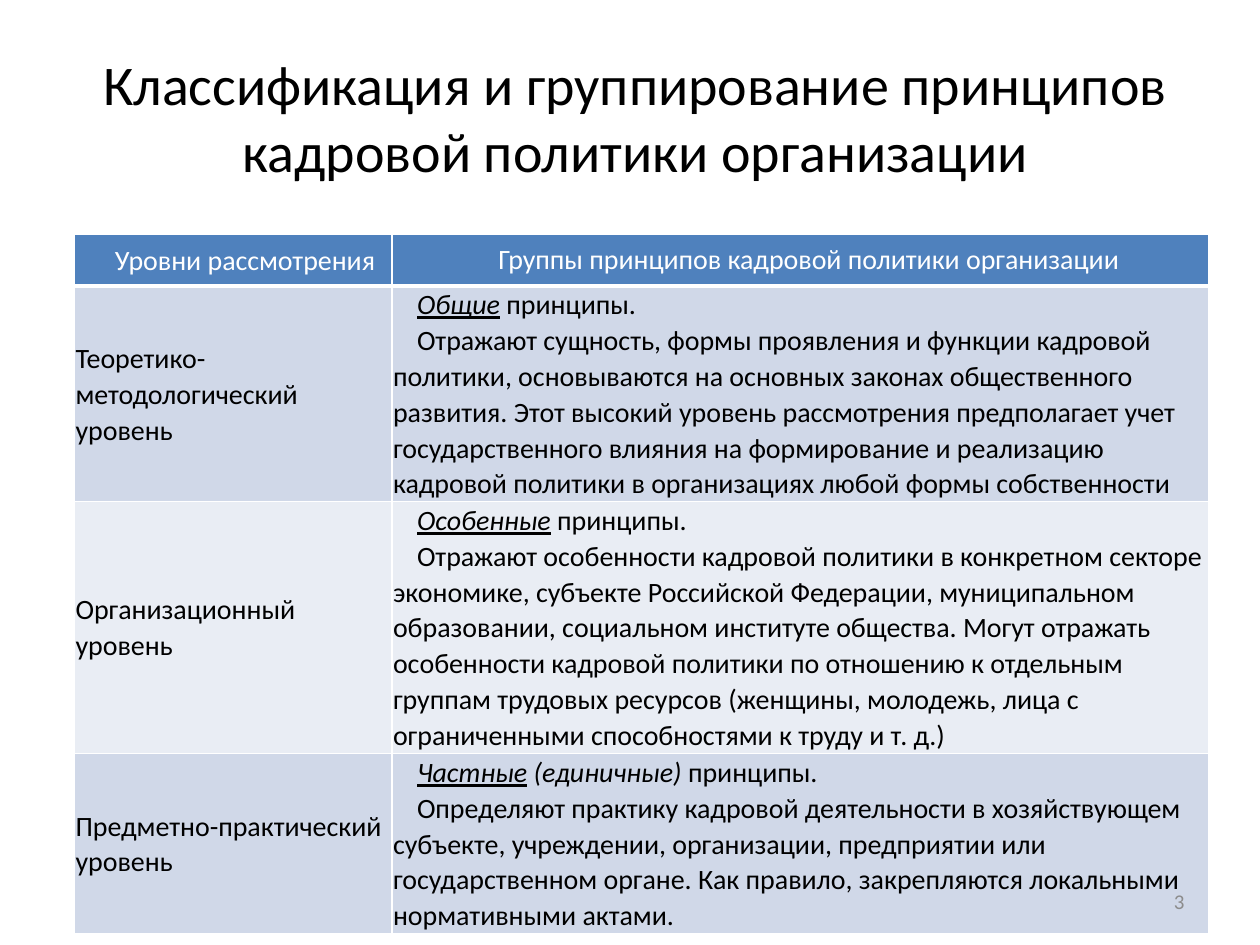
import dataclasses

import pptx
import pptx.dml.color
import pptx.enum.text
import pptx.oxml
import pptx.oxml.ns
import pptx.util

Inches = pptx.util.Inches
Pt = pptx.util.Pt
Align = pptx.enum.text.PP_ALIGN
MIDDLE = pptx.enum.text.MSO_ANCHOR.MIDDLE


@dataclasses.dataclass(frozen=True)
class Theme:
    font: str = "Calibri"
    title_size: int = 32
    table_size: int = 16
    number_size: int = 12
    ink: str = "000000"
    light: str = "FFFFFF"
    muted: str = "8C8C8C"
    header: str = "4F81BD"
    bands: tuple = ("D0D8E8", "E9EDF4")


THEME = Theme()
UNDERLINED, ITALIC, PLAIN = (True, True), (True, False), (False, False)
FIRST_LINE = 0.19

TITLE = "Классификация и группирование принципов кадровой политики организации"
HEADINGS = [
    ("Уровни рассмотрения", FIRST_LINE, 1.07),
    ("Группы принципов кадровой политики организации", 0.14, 1.0),
]
LEVELS = [
    (
        "Теоретико- методологический уровень",
        [("Общие", UNDERLINED), (" принципы.", PLAIN)],
        "Отражают сущность, формы проявления и функции кадровой политики, "
        "основываются на основных законах общественного развития. Этот высокий "
        "уровень рассмотрения предполагает учет государственного влияния на "
        "формирование и реализацию кадровой политики в организациях любой формы "
        "собственности",
    ),
    (
        "Организационный уровень",
        [("Особенные", UNDERLINED), (" принципы.", PLAIN)],
        "Отражают особенности кадровой политики в конкретном секторе экономике, "
        "субъекте Российской Федерации, муниципальном образовании, социальном "
        "институте общества. Могут отражать особенности кадровой политики по "
        "отношению к отдельным группам трудовых ресурсов (женщины, молодежь, лица "
        "с ограниченными способностями к труду и т. д.)",
    ),
    (
        "Предметно-практический уровень",
        [("Частные", UNDERLINED), (" (единичные)", ITALIC), (" принципы.", PLAIN)],
        "Определяют практику кадровой деятельности в хозяйствующем субъекте, "
        "учреждении, организации, предприятии или государственном органе. Как "
        "правило, закрепляются локальными нормативными актами.",
    ),
]
COLUMN_WIDTHS = [2.52, 6.48]
ROW_HEIGHTS = [0.41, 1.71, 2.0, 1.43]


def rgb(color):
    return pptx.dml.color.RGBColor.from_string(color)


def style_font(font, size, color):
    font.name = THEME.font
    font.size = Pt(size)
    font.bold = False
    font.color.rgb = rgb(color)


def write_paragraph(paragraph, pieces, size, color, align=Align.LEFT,
                    indent=0, spacing=1.0):
    paragraph.alignment = align
    paragraph.line_spacing = spacing
    if indent:
        properties = paragraph._p.get_or_add_pPr()
        properties.set("marL", "0")
        properties.set("indent", str(Inches(indent)))
    for words, (italic, underline) in pieces:
        run = paragraph.add_run()
        run.text = words
        style_font(run.font, size, color)
        run.font.italic = italic
        run.font.underline = underline


def add_border(cell, side, width):
    cell._tc.get_or_add_tcPr().append(pptx.oxml.parse_xml(
        f'<a:{side} {pptx.oxml.ns.nsdecls("a")} w="{Pt(width)}">'
        f'<a:solidFill><a:srgbClr val="{THEME.light}"/></a:solidFill></a:{side}>'
    ))


def prepare_cell(cell, fill, top=1, bottom=1):
    cell.margin_left = cell.margin_right = Inches(0.01)
    cell.margin_top = cell.margin_bottom = 0
    cell.vertical_anchor = MIDDLE
    for side, width in (("lnL", 1), ("lnR", 1), ("lnT", top), ("lnB", bottom)):
        add_border(cell, side, width)
    cell.fill.solid()
    cell.fill.fore_color.rgb = rgb(fill)


def fill_header(table):
    for column, (heading, indent, spacing) in enumerate(HEADINGS):
        cell = table.cell(0, column)
        prepare_cell(cell, THEME.header, bottom=3)
        write_paragraph(cell.text_frame.paragraphs[0], [(heading, PLAIN)],
                        THEME.table_size, THEME.light, Align.CENTER, indent, spacing)


def fill_level(table, row, level, group, description):
    band = THEME.bands[(row - 1) % 2]
    level_cell, group_cell = table.cell(row, 0), table.cell(row, 1)
    for cell in (level_cell, group_cell):
        prepare_cell(cell, band, top=3 if row == 1 else 1)
    write_paragraph(level_cell.text_frame.paragraphs[0], [(level, PLAIN)],
                    THEME.table_size, THEME.ink, spacing=1.05)
    principles = group_cell.text_frame
    for paragraph, pieces in (
        (principles.paragraphs[0], group),
        (principles.add_paragraph(), [(description, PLAIN)]),
    ):
        write_paragraph(paragraph, pieces, THEME.table_size, THEME.ink,
                        indent=FIRST_LINE, spacing=1.05)


def add_principles_table(slide):
    table = slide.shapes.add_table(
        len(ROW_HEIGHTS), len(COLUMN_WIDTHS), Inches(0.59), Inches(1.86),
        Inches(sum(COLUMN_WIDTHS)), Inches(sum(ROW_HEIGHTS))).table
    for column, width in zip(table.columns, COLUMN_WIDTHS):
        column.width = Inches(width)
    for row, height in zip(table.rows, ROW_HEIGHTS):
        row.height = Inches(height)
    fill_header(table)
    for row, (level, group, description) in enumerate(LEVELS, start=1):
        fill_level(table, row, level, group, description)


def set_title(slide):
    title = slide.shapes.title
    title.left, title.top = Inches(0.2), Inches(0.3)
    title.width, title.height = Inches(9.69), Inches(1.25)
    title.text_frame.text = TITLE
    title.text_frame.vertical_anchor = MIDDLE
    heading = title.text_frame.paragraphs[0]
    heading.alignment = Align.CENTER
    style_font(heading.runs[0].font, THEME.title_size, THEME.ink)


def add_page_number(slide, number):
    frame = slide.shapes.add_textbox(
        Inches(7.17), Inches(6.95), Inches(2.33), Inches(0.4)).text_frame
    frame.word_wrap = True
    frame.vertical_anchor = MIDDLE
    write_paragraph(frame.paragraphs[0], [(number, PLAIN)],
                    THEME.number_size, THEME.muted, Align.RIGHT)


def main():
    presentation = pptx.Presentation()
    presentation.slide_width, presentation.slide_height = Inches(10), Inches(7.5)
    slide = presentation.slides.add_slide(presentation.slide_layouts[5])
    set_title(slide)
    add_principles_table(slide)
    add_page_number(slide, "3")
    presentation.save("out.pptx")


if __name__ == "__main__":
    main()
